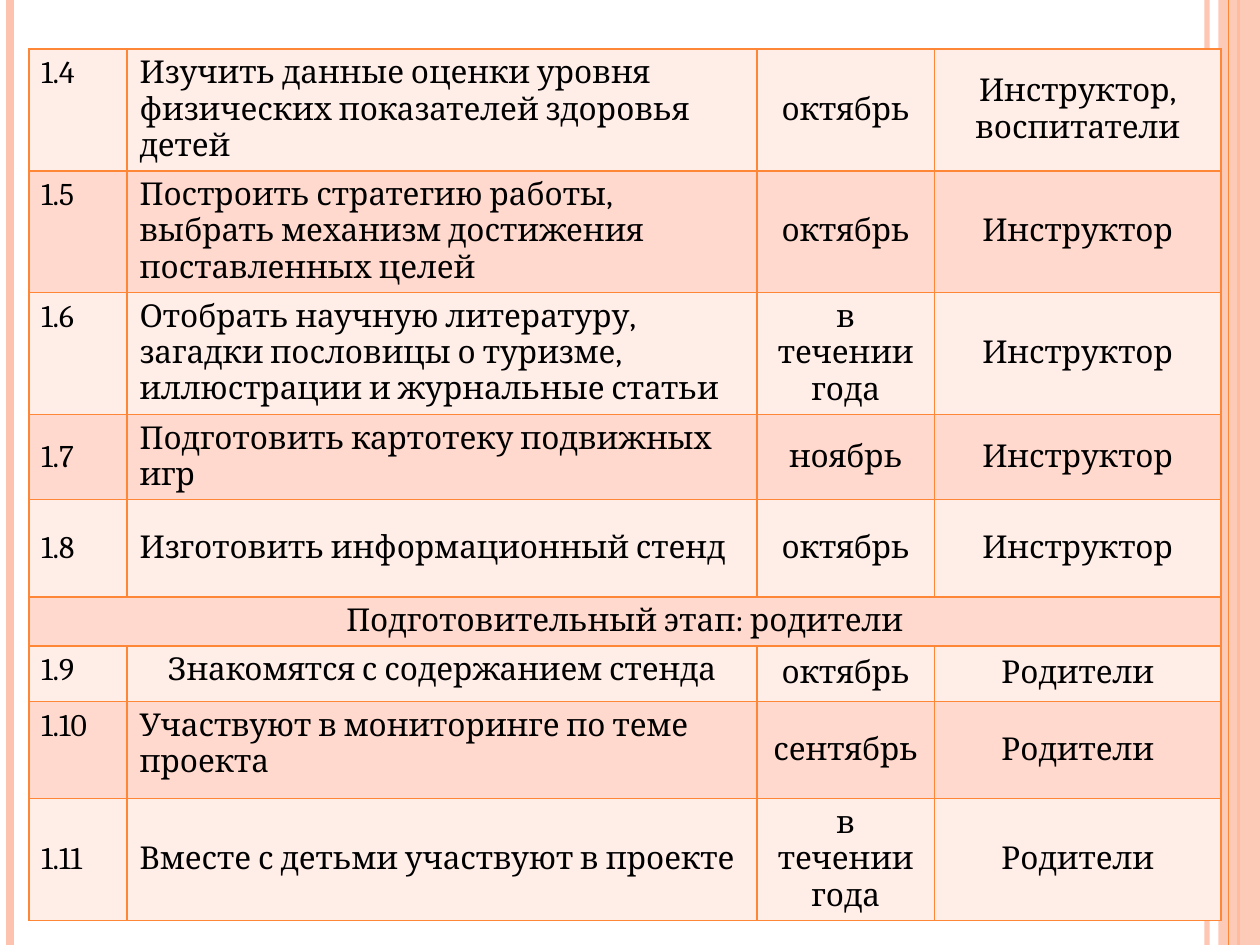
from lxml.etree import SubElement
from pptx import Presentation
from pptx.dml.color import RGBColor
from pptx.enum.shapes import MSO_CONNECTOR, MSO_SHAPE
from pptx.enum.text import MSO_ANCHOR, PP_ALIGN
from pptx.oxml import parse_xml
from pptx.oxml.ns import nsdecls, qn
from pptx.util import Cm, Pt

WIDTH, HEIGHT = 25.4, 19.05
ORANGE, PEACH = "FE8637", "FEC3AE"
ROW_FILLS = ["FFEDE8", "FFD9CE"]
COLUMN_WIDTHS = [1.98, 12.7, 3.58, 5.77]
ROW_HEIGHTS = [1.96, 1.96, 1.96, 0.91, 1.96, 0.94, 1.12, 1.96, 1.96]
TOP, MIDDLE = MSO_ANCHOR.TOP, MSO_ANCHOR.MIDDLE
LEFT, CENTER = PP_ALIGN.LEFT, PP_ALIGN.CENTER
SECTION = "Подготовительный этап: родители"
TASKS = [
    ("1.4", "Изучить данные оценки уровня физических показателей здоровья детей",
     "октябрь", "Инструктор,\nвоспитатели", TOP, LEFT),
    ("1.5", "Построить стратегию работы, выбрать механизм достижения поставленных целей",
     "октябрь", "Инструктор", TOP, LEFT),
    ("1.6", "Отобрать научную литературу, загадки пословицы о туризме, "
     "иллюстрации и журнальные статьи", "в течении года", "Инструктор", TOP, LEFT),
    ("1.7", "Подготовить картотеку подвижных игр", "ноябрь", "Инструктор", MIDDLE, LEFT),
    ("1.8", "Изготовить информационный стенд", "октябрь", "Инструктор", MIDDLE, LEFT),
    None,
    ("1.9", "Знакомятся с содержанием стенда", "октябрь", "Родители", TOP, CENTER),
    ("1.10", "Участвуют в мониторинге по теме проекта", "сентябрь", "Родители", TOP, LEFT),
    ("1.11", "Вместе с детьми участвуют в проекте", "в течении года", "Родители", MIDDLE, LEFT),
]


def color(value):
    return RGBColor.from_string(value)


def set_alpha(shape, percent):
    for element in shape._element.spPr.iter(qn("a:srgbClr")):
        SubElement(element, qn("a:alpha"), val=str(percent * 1000))


def add_stripe(slide, x, top, height, value, weight):
    line = slide.shapes.add_connector(
        MSO_CONNECTOR.STRAIGHT, Cm(x), Cm(top), Cm(x), Cm(top + height))
    line.line.color.rgb = color(value)
    line.line.width = Pt(weight)
    SubElement(line._element.spPr, qn("a:effectLst"))
    return line


def add_side_bands(slide, left, top, width, height):
    right = left + width
    set_alpha(add_stripe(slide, right - 1.07, top, height, PEACH, 3), 93)
    add_stripe(slide, left + 0.2, top, height, PEACH, 4.5)
    add_stripe(slide, right - 0.43, top, height, ORANGE, 1.5)
    band = slide.shapes.add_shape(
        MSO_SHAPE.RECTANGLE, Cm(right - 0.84), Cm(top), Cm(0.84), Cm(height))
    band.shadow.inherit = False
    band.fill.solid()
    band.fill.fore_color.rgb = color(PEACH)
    set_alpha(band, 87)
    band.line.fill.background()
    add_stripe(slide, right - 0.63, top, height, ORANGE, 0.75)


def format_cell(cell, fill, text="", alignment=LEFT, anchor=MIDDLE):
    properties = cell._tc.get_or_add_tcPr()
    for side in ("lnL", "lnR", "lnT", "lnB"):
        properties.append(parse_xml(
            f'<a:{side} {nsdecls("a")} w="12700"><a:solidFill>'
            f'<a:srgbClr val="{ORANGE}"/></a:solidFill></a:{side}>'))
    cell.fill.solid()
    cell.fill.fore_color.rgb = color(fill)
    cell.vertical_anchor = anchor
    cell.text = text
    for paragraph in cell.text_frame.paragraphs:
        paragraph.alignment = alignment
        for name, value in {"name": "Cambria", "size": Pt(18), "bold": False}.items():
            setattr(paragraph.font, name, value)
            for run in paragraph.runs:
                setattr(run.font, name, value)
        for run in paragraph.runs:
            run.font.color.rgb = color("000000")


def add_plan_table(slide, left, top):
    table = slide.shapes.add_table(
        len(TASKS), len(COLUMN_WIDTHS), Cm(left), Cm(top),
        Cm(sum(COLUMN_WIDTHS)), Cm(sum(ROW_HEIGHTS))).table
    table.first_row = False
    for column, width in zip(table.columns, COLUMN_WIDTHS):
        column.width = Cm(width)
    for index, (row, height, task) in enumerate(zip(table.rows, ROW_HEIGHTS, TASKS)):
        row.height = Cm(height)
        fill = ROW_FILLS[index % 2]
        if task is None:
            row.cells[0].merge(row.cells[3])
            for cell, text in zip(row.cells, [SECTION, "", "", ""]):
                format_cell(cell, fill, text, CENTER)
            continue
        *texts, anchor, alignment = task
        alignments = [LEFT, alignment, CENTER, CENTER]
        anchors = [anchor, anchor, MIDDLE, MIDDLE]
        for cell, *settings in zip(row.cells, texts, alignments, anchors):
            format_cell(cell, fill, *settings)


def main():
    presentation = Presentation()
    presentation.slide_width, presentation.slide_height = Cm(WIDTH), Cm(HEIGHT)
    slide = presentation.slides.add_slide(presentation.slide_layouts[6])
    add_side_bands(slide, 0, 0, WIDTH, HEIGHT)
    add_plan_table(slide, 0.58, 0.99)
    presentation.save("out.pptx")


if __name__ == "__main__":
    main()
